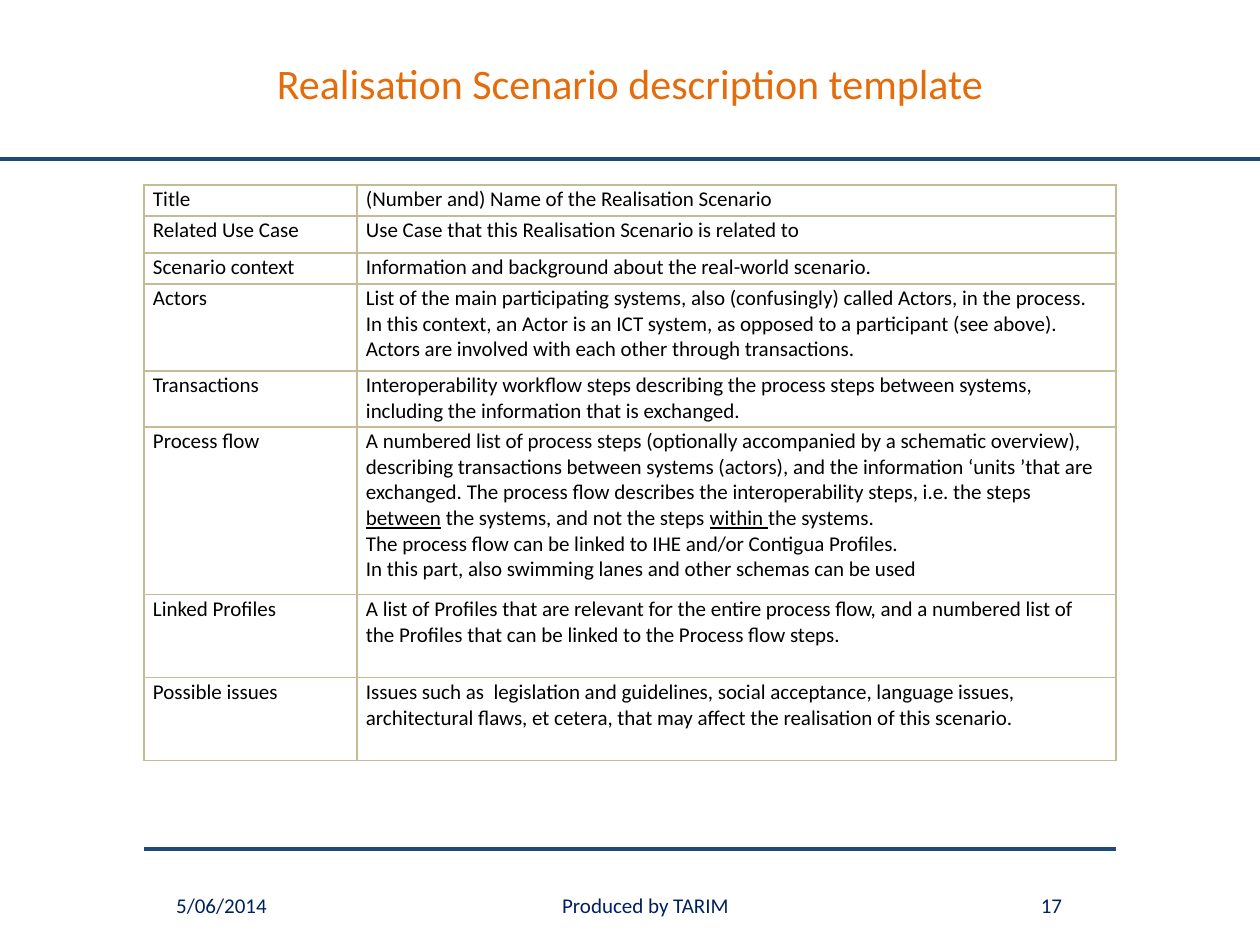
"""Build the Realisation Scenario description template slide."""
from lxml import etree
from pptx import Presentation
from pptx.dml.color import RGBColor
from pptx.enum import shapes, text
from pptx.oxml import ns
from pptx.util import Emu, Pt

EMU_PER_PX = 914400 / 126
FONT = "Calibri"
ORANGE = RGBColor(0xE4, 0x6C, 0x0A)
NAVY = RGBColor(0x00, 0x20, 0x60)
BLUE = RGBColor(0x1F, 0x49, 0x7D)
BLACK = RGBColor(0, 0, 0)
TAN = RGBColor(0xC4, 0xBC, 0x96)

LABELS = [
    ("Realisation Scenario description template", (218, 33, 824, 100), 24, ORANGE),
    ("5/06/2014", (144, 880, 155, 50), 12, NAVY),
    ("Produced by TARIM", (333, 880, 625, 50), 12, NAVY),
    ("17", (987, 880, 129, 50), 12, NAVY),
]
RULES = [(144, 1116, 849), (0, 1260, 159)]

TABLE_LEFT, TABLE_TOP = 144, 185
COLUMN_WIDTHS = [213, 759]
UNDERLINED = {"between", "within "}
ROWS = [
    ("Title", 31, [["(Number and) Name of the Realisation Scenario"]]),
    ("Related Use Case", 37, [["Use Case that this Realisation Scenario is related to"]]),
    ("Scenario context", 31, [["Information and background about the real-world scenario."]]),
    ("Actors", 87, [[
        "List of the main participating systems, also (confusingly) called Actors, in the process. "
        "In this context, an Actor is an ICT system, as opposed to a participant (see above). "
        "Actors are involved with each other through transactions."]]),
    ("Transactions", 56, [[
        "Interoperability workflow steps describing the process steps between systems, "
        "including the information that is exchanged."]]),
    ("Process flow", 168, [
        ["A numbered list of process steps (optionally accompanied by a schematic overview), "
         "describing transactions between systems (actors), and the information ‘units ’that are "
         "exchanged. The process flow describes the interoperability steps, i.e. the steps ",
         "between", " the systems, and not the steps ", "within ", "the systems."],
        ["The process flow can be linked to IHE and/or Contigua Profiles."],
        ["In this part, also swimming lanes and other schemas can be used"]]),
    ("Linked Profiles", 83, [[
        "A list of Profiles that are relevant for the entire process flow, and a numbered list of the "
        "Profiles that can be linked to the Process flow steps."]]),
    ("Possible issues", 83, [[
        "Issues such as  legislation and guidelines, social acceptance, language issues, "
        "architectural flaws, et cetera, that may affect the realisation of this scenario."]]),
]


def px(value):
    return Emu(round(value * EMU_PER_PX))


def set_font(paragraph, size, color):
    font = paragraph.font
    font.name, font.size = FONT, Pt(size)
    font.color.rgb = color


def add_label(slide, label, box, size, color):
    frame = slide.shapes.add_textbox(*map(px, box)).text_frame
    frame.word_wrap = True
    frame.vertical_anchor = text.MSO_ANCHOR.MIDDLE
    paragraph = frame.paragraphs[0]
    paragraph.text = label
    paragraph.alignment = text.PP_ALIGN.CENTER
    set_font(paragraph, size, color)


def add_rule(slide, left, right, y):
    rule = slide.shapes.add_connector(
        shapes.MSO_CONNECTOR.STRAIGHT, px(left), px(y), px(right), px(y))
    rule.line.color.rgb = BLUE
    rule.line.width = Pt(2.25)
    etree.SubElement(rule._element.spPr, ns.qn("a:effectLst"))


def add_borders(cell):
    properties = cell._tc.get_or_add_tcPr()
    for index, side in enumerate(("lnL", "lnR", "lnT", "lnB")):
        line = etree.Element(ns.qn(f"a:{side}"), w=str(Pt(1)))
        fill = etree.SubElement(line, ns.qn("a:solidFill"))
        etree.SubElement(fill, ns.qn("a:srgbClr"), val=str(TAN))
        properties.insert(index, line)


def fill_cell(cell, paragraphs):
    cell.margin_left = cell.margin_right = px(9)
    cell.margin_top = cell.margin_bottom = px(2)
    cell.fill.background()
    add_borders(cell)
    frame = cell.text_frame
    for index, runs in enumerate(paragraphs):
        paragraph = frame.add_paragraph() if index else frame.paragraphs[0]
        for words in runs:
            run = paragraph.add_run()
            run.text = words
            if words in UNDERLINED:
                run.font.underline = True
        set_font(paragraph, 12, BLACK)


def add_scenario_table(slide):
    height = sum(row_height for _, row_height, _ in ROWS)
    table = slide.shapes.add_table(
        len(ROWS), len(COLUMN_WIDTHS), px(TABLE_LEFT), px(TABLE_TOP),
        px(sum(COLUMN_WIDTHS)), px(height)).table
    table.first_row = table.horz_banding = False
    for column, width in zip(table.columns, COLUMN_WIDTHS):
        column.width = px(width)
    for row, (name, row_height, description) in zip(table.rows, ROWS):
        row.height = px(row_height)
        fill_cell(row.cells[0], [[name]])
        fill_cell(row.cells[1], description)


def main():
    presentation = Presentation()
    presentation.slide_width, presentation.slide_height = px(1260), px(945)
    slide = presentation.slides.add_slide(presentation.slide_layouts[6])
    for rule in RULES:
        add_rule(slide, *rule)
    for label in LABELS:
        add_label(slide, *label)
    add_scenario_table(slide)
    presentation.save("out.pptx")


if __name__ == "__main__":
    main()
